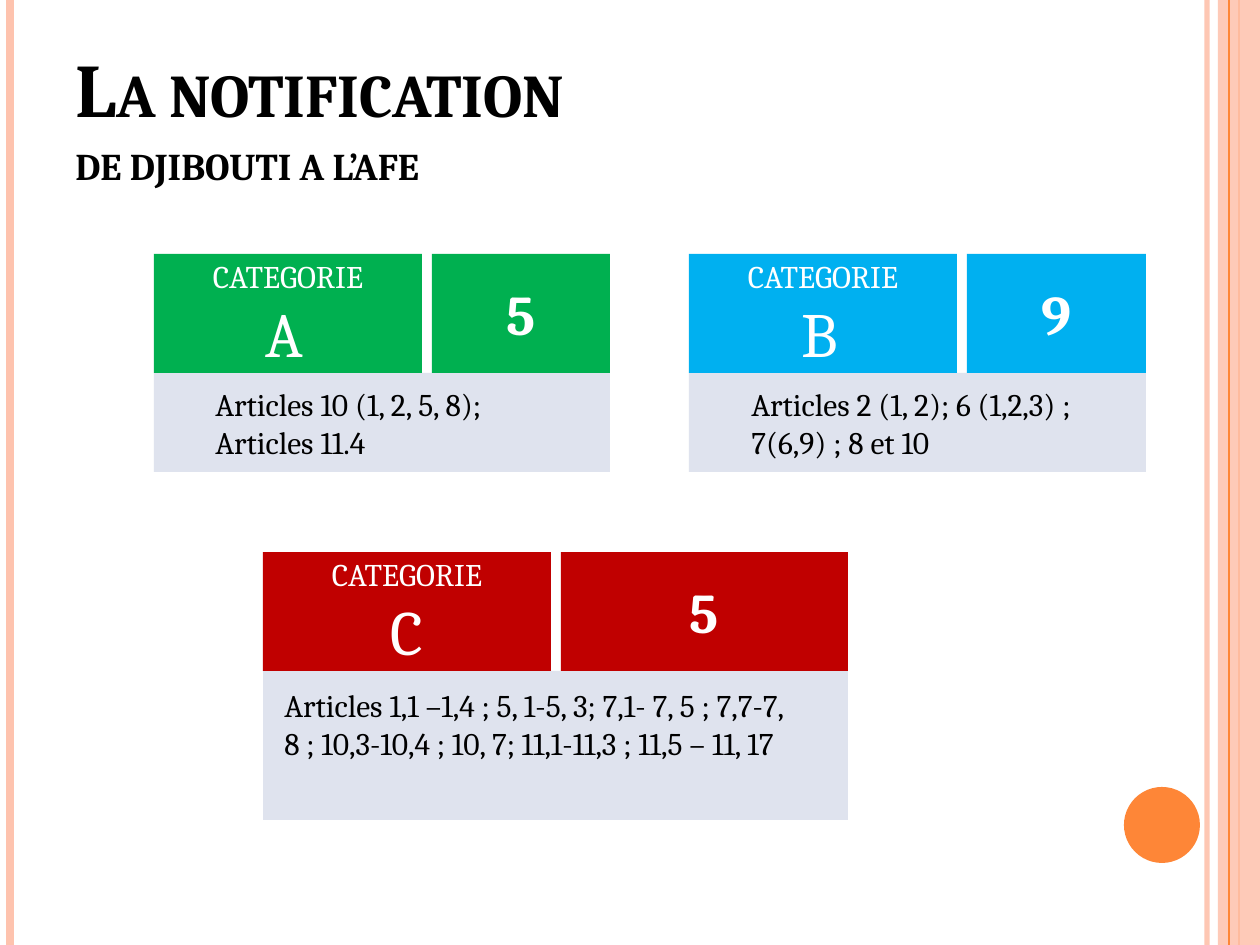
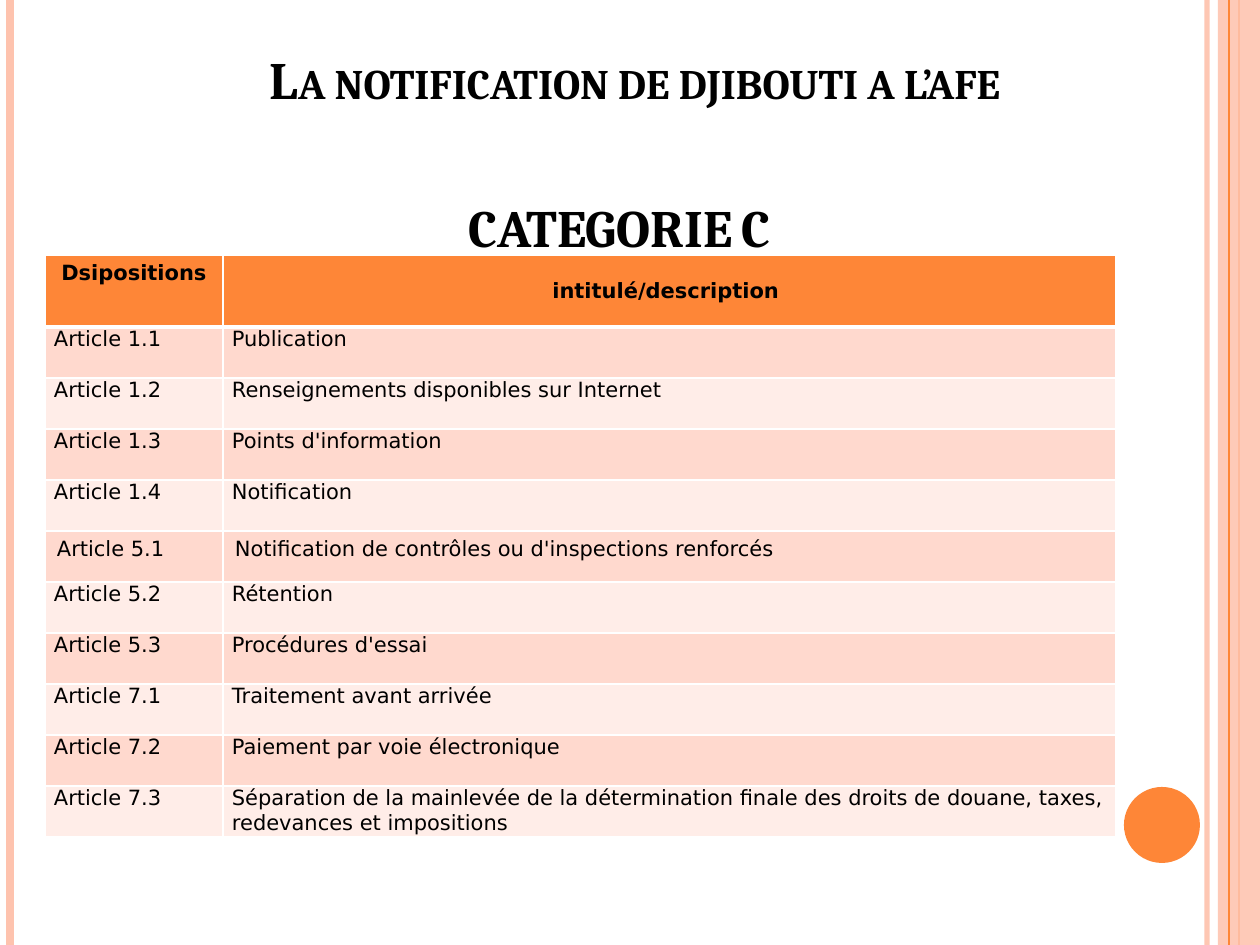
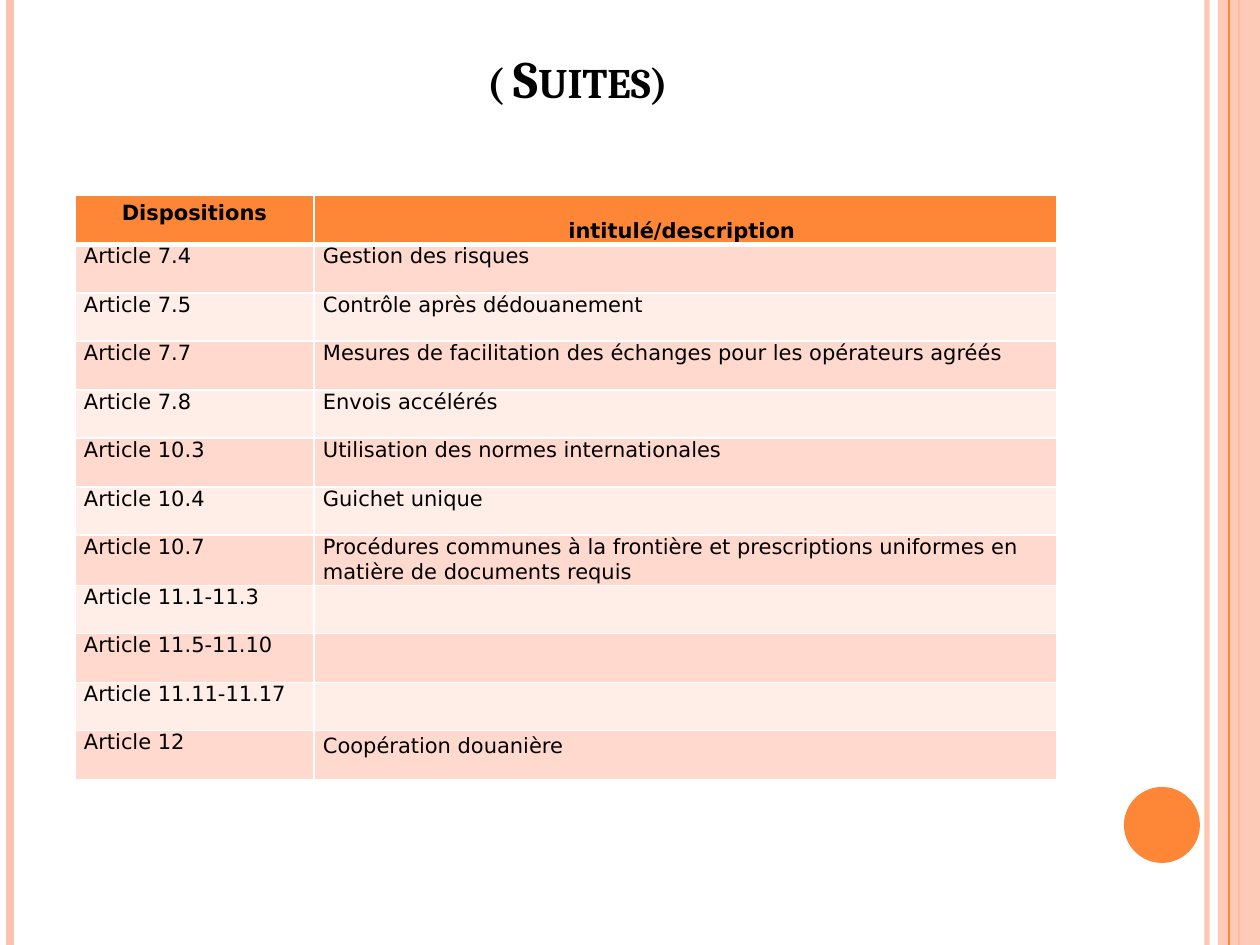
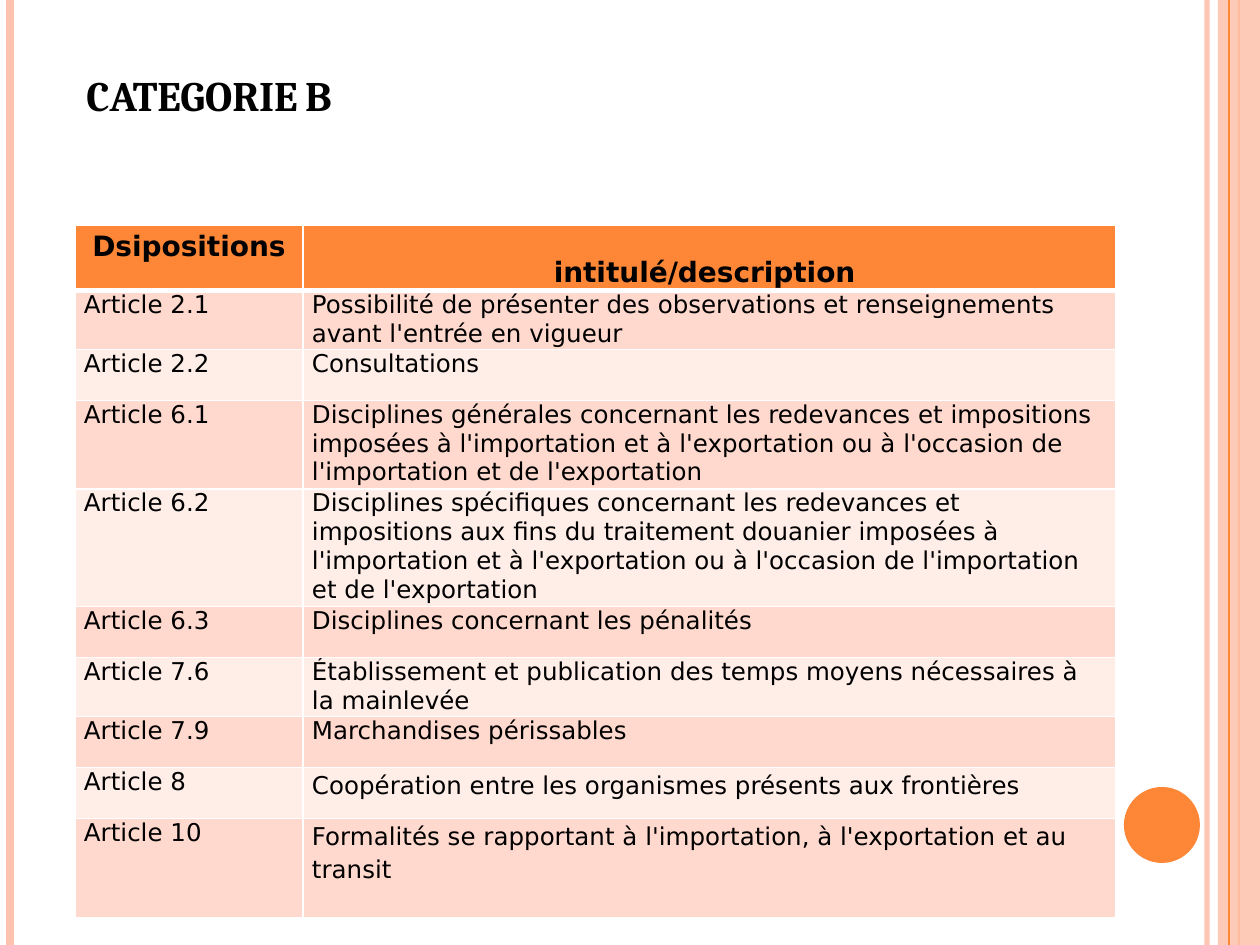
from dataclasses import dataclass, field
from typing import Any

from lxml import etree
from pptx import Presentation
from pptx.dml.color import RGBColor
from pptx.enum.shapes import MSO_CONNECTOR, MSO_SHAPE
from pptx.enum.text import MSO_ANCHOR, PP_ALIGN
from pptx.oxml.ns import qn
from pptx.util import Emu, Pt

STRAIGHT = MSO_CONNECTOR.STRAIGHT
RECTANGLE = MSO_SHAPE.RECTANGLE
OVAL = MSO_SHAPE.OVAL
LEFT = PP_ALIGN.LEFT
CENTER = PP_ALIGN.CENTER
TOP = MSO_ANCHOR.TOP
MIDDLE = MSO_ANCHOR.MIDDLE
BOTTOM = MSO_ANCHOR.BOTTOM

PX = 914400 / 126
PAGE_WIDTH = 1260
PAGE_HEIGHT = 945
SERIF = "Cambria"
SANS = "DejaVu Sans"
COLORS = {
    "black": "000000",
    "white": "FFFFFF",
    "orange": "FE8637",
    "peach": "FEC3AE",
    "band_dark": "FFD9CE",
    "band_light": "FFEDE8",
    "panel": "DFE3EE",
    "green": "00B050",
    "blue": "00B0F0",
    "red": "C00000",
}


@dataclass(frozen=True)
class Area:
    left: int
    top: int
    width: int
    height: int

    def emu(self) -> tuple[Emu, ...]:
        return tuple(px(v) for v in (self.left, self.top, self.width, self.height))


@dataclass(frozen=True)
class Span:
    text: str
    size: float
    color: str = "black"
    bold: bool = False
    font: str = SERIF
    small_caps: bool = False


@dataclass(frozen=True)
class Line:
    spans: list[Span]
    align: Any = LEFT
    spacing: float | None = None


@dataclass(frozen=True)
class Rule:
    x: int
    weight: float
    color: str
    opacity: int = 100


@dataclass(frozen=True)
class Category:
    letter: str
    gap: str
    count: str
    color: str
    left: int
    top: int
    head_width: int
    count_width: int
    body_height: int
    articles: list[str]
    articles_area: Area


@dataclass(frozen=True)
class Row:
    article: str
    wording: str = ""
    padded: bool = False
    spacing: float | None = None


@dataclass(frozen=True)
class Listing:
    left: int
    top: int
    columns: tuple[int, int]
    heights: tuple[int, ...]
    headings: tuple[str, str]
    heading_size: int
    heading_drop: int
    size: int
    rows: list[Row] = field(default_factory=list)


RULES_BEHIND = [
    Rule(1207, 3, "peach", 93),
    Rule(10, 4.5, "peach"),
    Rule(1239, 1.5, "orange"),
]
RULE_FRONT = Rule(1229, 0.75, "orange")
BAND = Area(1218, 0, 42, PAGE_HEIGHT)
DISC = Area(1124, 787, 76, 76)

HEAD_HEIGHT = 119
HEAD_GAP = 10
CATEGORIES = [
    Category("B", " ", "9", "blue", 689, 254, 268, 179, 99,
             ["Articles 2 (1, 2); 6 (1,2,3) ;", "7(6,9) ; 8 et 10"],
             Area(739, 379, 421, 90)),
    Category("C", "", "5", "red", 263, 552, 288, 287, 149,
             ["Articles 1,1 –1,4 ; 5, 1-5, 3; 7,1- 7, 5 ; 7,7-7, 8 ; "
              "10,3-10,4 ; 10, 7; 11,1-11,3 ; 11,5 – 11, 17"],
             Area(272, 680, 540, 128)),
    Category("A", " ", "5", "green", 154, 254, 268, 178, 99,
             ["Articles 10 (1, 2, 5, 8);", "Articles 11.4"],
             Area(203, 379, 355, 90)),
]

LISTING_C = Listing(
    45, 255, (178, 893), (72,) + (51,) * 10,
    ("Dsipositions", "intitulé/description "), 12, 24, 12,
    [
        Row("Article 1.1", "Publication"),
        Row("Article 1.2", "Renseignements disponibles sur Internet"),
        Row("Article 1.3", "Points d'information"),
        Row("Article 1.4", "Notification"),
        Row("Article 5.1", "Notification de contrôles ou d'inspections renforcés", True),
        Row("Article 5.2", "Rétention"),
        Row("Article 5.3", "Procédures d'essai"),
        Row("Article 7.1", "Traitement avant arrivée"),
        Row("Article 7.2", "Paiement par voie électronique"),
        Row("Article 7.3", "Séparation de la mainlevée de la détermination finale "
            "des droits de douane, taxes, redevances et impositions"),
    ],
)
LISTING_C_NEXT = Listing(
    75, 195, (239, 743), (48, 49) * 6,
    ("Dispositions", "intitulé/description "), 12, 24, 12,
    [
        Row("Article 7.4", "Gestion des risques"),
        Row("Article 7.5", "Contrôle après dédouanement"),
        Row("Article 7.7", "Mesures de facilitation des échanges pour les opérateurs agréés"),
        Row("Article 7.8", "Envois accélérés"),
        Row("Article 10.3", "Utilisation des normes internationales"),
        Row("Article 10.4", "Guichet unique"),
        Row("Article 10.7", "Procédures communes à la frontière et prescriptions "
            "uniformes en matière de documents requis"),
        Row("Article 11.1-11.3"),
        Row("Article 11.5-11.10"),
        Row("Article 11.11-11.17"),
        Row("Article 12", "Coopération douanière", spacing=1.15),
    ],
)
LISTING_B = Listing(
    75, 225, (228, 813), (65, 57, 51, 86, 115, 51, 57, 51, 51, 99),
    ("Dsipositions", "intitulé/description "), 16, 32, 14,
    [
        Row("Article 2.1", "Possibilité de présenter des observations et "
            "renseignements avant l'entrée en vigueur"),
        Row("Article 2.2", "Consultations"),
        Row("Article 6.1", "Disciplines générales concernant les redevances et "
            "impositions imposées à l'importation et à l'exportation ou à "
            "l'occasion de l'importation et de l'exportation"),
        Row("Article 6.2", "Disciplines spécifiques concernant les redevances et "
            "impositions aux fins du traitement douanier imposées à "
            "l'importation et à l'exportation ou à l'occasion de "
            "l'importation et de l'exportation"),
        Row("Article 6.3", "Disciplines concernant les pénalités"),
        Row("Article 7.6", "Établissement et publication des temps moyens "
            "nécessaires à la mainlevée"),
        Row("Article 7.9", "Marchandises périssables"),
        Row("Article 8", "Coopération entre les organismes présents aux frontières",
            spacing=1.15),
        Row("Article 10", "Formalités se rapportant à l'importation, à "
            "l'exportation et au transit", spacing=1.15),
    ],
)


def px(length: int) -> Emu:
    return Emu(round(length * PX))


def rgb(name: str) -> RGBColor:
    return RGBColor.from_string(COLORS[name])


def set_attributes(target: Any, values: dict[str, Any]) -> None:
    for name, value in values.items():
        setattr(target, name, value)


def set_opacity(shape: Any, percent: int) -> None:
    color = shape._element.spPr.find(".//" + qn("a:srgbClr"))
    etree.SubElement(color, qn("a:alpha"), val=str(percent * 1000))


def write_lines(frame: Any, lines: list[Line]) -> None:
    for index, line in enumerate(lines):
        para = frame.add_paragraph() if index else frame.paragraphs[0]
        set_attributes(para, {"alignment": line.align, "line_spacing": line.spacing})
        for part in line.spans:
            if part.text == "\n":
                para.add_line_break()
                continue
            span = para.add_run()
            span.text = part.text
            set_attributes(span.font, {
                "size": Pt(part.size), "bold": part.bold, "name": part.font,
            })
            span.font.color.rgb = rgb(part.color)
            if part.small_caps:
                span._r.get_or_add_rPr().set("cap", "small")


def add_text(shapes: Any, area: Area, lines: list[Line], anchor: Any = TOP) -> None:
    box = shapes.add_textbox(*area.emu())
    set_attributes(box.text_frame, {"word_wrap": True, "vertical_anchor": anchor})
    write_lines(box.text_frame, lines)


def add_block(shapes: Any, kind: Any, area: Area, color: str,
              lines: list[Line] | None = None) -> Any:
    block = shapes.add_shape(kind, *area.emu())
    block.shadow.inherit = False
    block.fill.solid()
    block.fill.fore_color.rgb = rgb(color)
    block.line.fill.background()
    if lines:
        set_attributes(block.text_frame, {"word_wrap": True, "vertical_anchor": MIDDLE})
        write_lines(block.text_frame, lines)
    return block


def add_rule(page: Any, rule: Rule) -> None:
    connector = page.shapes.add_connector(
        STRAIGHT, px(rule.x), px(0), px(rule.x), px(PAGE_HEIGHT))
    connector.line.color.rgb = rgb(rule.color)
    connector.line.width = Pt(rule.weight)
    etree.SubElement(connector._element.spPr, qn("a:effectLst"))
    if rule.opacity < 100:
        set_opacity(connector, rule.opacity)


def add_page(deck: Any) -> Any:
    page = deck.slides.add_slide(deck.slide_layouts[6])
    for rule in RULES_BEHIND:
        add_rule(page, rule)
    set_opacity(add_block(page.shapes, RECTANGLE, BAND, "peach"), 87)
    add_rule(page, RULE_FRONT)
    add_block(page.shapes, OVAL, DISC, "orange")
    return page


def add_title(page: Any, area: Area, parts: list[tuple[str, float]],
              align: Any = CENTER) -> None:
    spans = [Span(text, size, bold=True, small_caps=True) for text, size in parts]
    add_text(page.shapes, area, [Line(spans, align)], BOTTOM)


def add_category(page: Any, category: Category) -> None:
    shapes = page.shapes.add_group_shape().shapes
    left, top = category.left, category.top
    count_left = left + category.head_width + HEAD_GAP
    width = count_left + category.count_width - left
    letter = [Span(category.letter, 36, "white")]
    if category.gap:
        letter.append(Span(category.gap, 18, "white"))
    add_block(shapes, RECTANGLE,
              Area(left, top + HEAD_HEIGHT, width, category.body_height), "panel")
    add_block(shapes, RECTANGLE,
              Area(left, top, category.head_width, HEAD_HEIGHT), category.color,
              [Line([Span("CATEGORIE", 18, "white")], CENTER), Line(letter, CENTER)])
    add_block(shapes, RECTANGLE,
              Area(count_left, top, category.count_width, HEAD_HEIGHT), category.color,
              [Line([Span(category.count, 32, "white", True)], CENTER)])
    add_text(shapes, category.articles_area,
             [Line([Span(text, 18)]) for text in category.articles])


def add_borders(cell: Any, weights: dict[str, float]) -> None:
    properties = cell._tc.get_or_add_tcPr()
    for side, weight in weights.items():
        border = etree.SubElement(properties, qn(f"a:ln{side}"), w=str(Pt(weight)))
        fill = etree.SubElement(border, qn("a:solidFill"))
        etree.SubElement(fill, qn("a:srgbClr"), val=COLORS["white"])


def fill_cell(cell: Any, color: str, line: Line, margins: tuple[int, int],
              weights: dict[str, float]) -> None:
    add_borders(cell, weights)
    cell.fill.solid()
    cell.fill.fore_color.rgb = rgb(color)
    side, top = margins
    set_attributes(cell, {
        "margin_left": px(side), "margin_right": px(side),
        "margin_top": px(top), "margin_bottom": px(0), "vertical_anchor": TOP,
    })
    if line.spans[0].text:
        write_lines(cell.text_frame, [line])


def add_listing(page: Any, listing: Listing) -> None:
    area = Area(listing.left, listing.top, sum(listing.columns), sum(listing.heights))
    table = page.shapes.add_table(
        len(listing.heights), len(listing.columns), *area.emu()).table
    for column, width in zip(table.columns, listing.columns):
        column.width = px(width)
    for row, height in zip(table.rows, listing.heights):
        row.height = px(height)
    heading_margins = ((12, 6), (9, listing.heading_drop))
    for index, heading in enumerate(listing.headings):
        line = Line([Span(heading, listing.heading_size, bold=True, font=SANS)], CENTER)
        fill_cell(table.cell(0, index), "orange", line, heading_margins[index],
                  {"L": 1, "R": 1, "T": 1, "B": 3})
    for number, row in enumerate(listing.rows, 1):
        color = "band_dark" if number % 2 else "band_light"
        margins = (12, 6) if row.padded else (9, 0)
        weights = {"L": 1, "R": 1, "T": 3 if number == 1 else 1, "B": 1}
        for index, text in enumerate((row.article, row.wording)):
            line = Line([Span(text, listing.size, font=SANS)],
                        spacing=row.spacing if index else None)
            fill_cell(table.cell(number, index), color, line, margins, weights)


def main() -> None:
    deck = Presentation()
    set_attributes(deck, {"slide_width": px(PAGE_WIDTH), "slide_height": px(PAGE_HEIGHT)})

    page = add_page(deck)
    add_title(page, Area(63, 38, 1029, 158),
              [("La notification ", 43.2), ("\n", 43.2), ("de djibouti a l’afe", 27)], LEFT)
    for category in CATEGORIES:
        add_category(page, category)

    page = add_page(deck)
    add_title(page, Area(105, 185, 1029, 79), [("CATEGORIE C", 30)])
    add_listing(page, LISTING_C)
    add_title(page, Area(125, 37, 1029, 79), [("La notification de djibouti a l’afe ", 30)])

    page = add_page(deck)
    add_title(page, Area(63, 38, 1029, 77), [("( Suites)", 30)])
    add_listing(page, LISTING_C_NEXT)

    page = add_page(deck)
    add_title(page, Area(74, 37, 1029, 89), [("CATEGORIE B", 24)], LEFT)
    add_listing(page, LISTING_B)

    deck.save("out.pptx")


if __name__ == "__main__":
    main()
